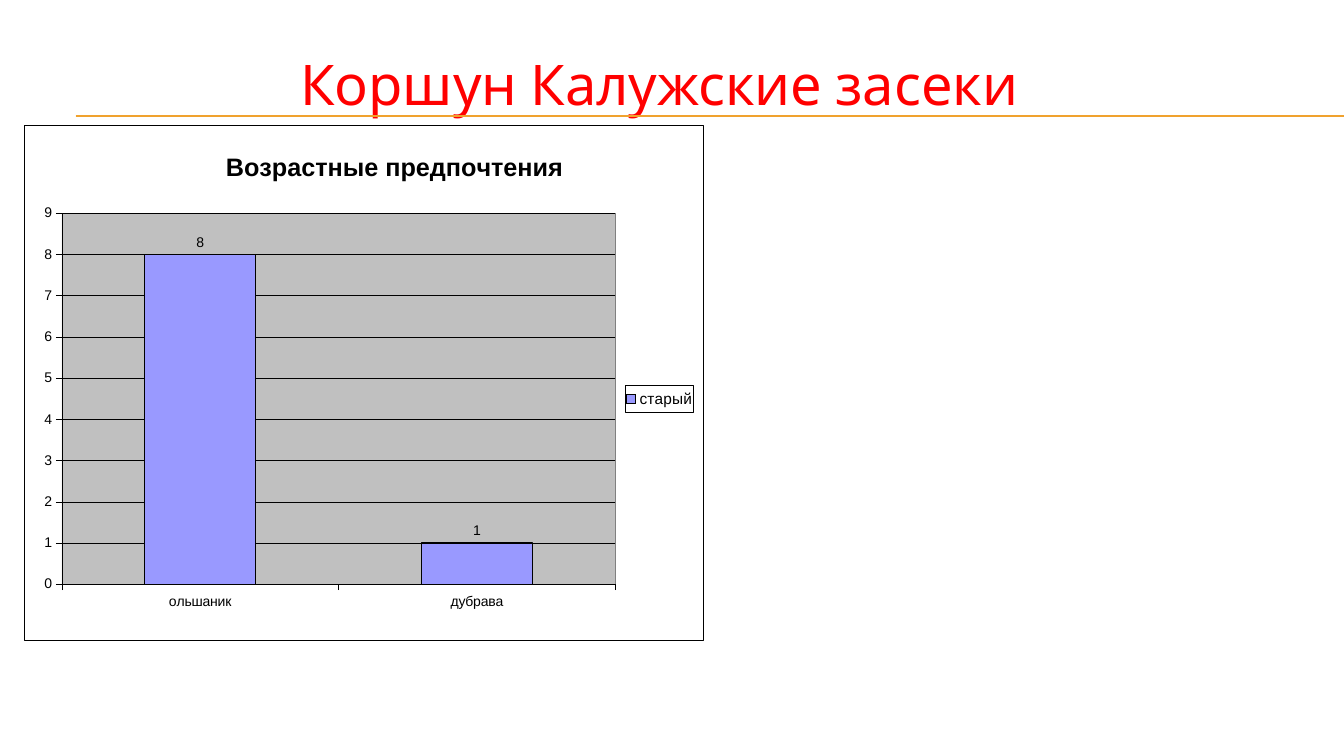
from dataclasses import dataclass
from typing import Optional

from lxml.etree import SubElement
from pptx import Presentation
from pptx.chart.chart import Chart
from pptx.chart.data import CategoryChartData
from pptx.dml.color import RGBColor
from pptx.enum.chart import XL_CHART_TYPE, XL_LABEL_POSITION, XL_LEGEND_POSITION, XL_TICK_MARK
from pptx.enum.shapes import MSO_CONNECTOR
from pptx.enum.text import MSO_ANCHOR, PP_ALIGN
from pptx.oxml import parse_xml
from pptx.oxml.ns import nsdecls, qn
from pptx.util import Inches, Pt

RED = RGBColor(0xFF, 0x00, 0x00)
GOLD = RGBColor(0xF0, 0xA2, 0x2E)
BLACK = RGBColor(0x00, 0x00, 0x00)
WHITE = RGBColor(0xFF, 0xFF, 0xFF)
SILVER = RGBColor(0xC0, 0xC0, 0xC0)
GREY = RGBColor(0x80, 0x80, 0x80)
LAVENDER = RGBColor(0x99, 0x99, 0xFF)
HAIRLINE = Pt(0.25)


@dataclass
class Rule:
    left: float
    right: float
    top: float


@dataclass
class Layout:
    """Fractions of the chart area."""
    x: float
    y: float
    w: Optional[float] = None
    h: Optional[float] = None
    inner: bool = False


RULES = [Rule(0.75, 13.33, 1.15), Rule(0.75, 13.33, 1.16)]


def add_rule(slide, rule: Rule) -> None:
    line = slide.shapes.add_connector(
        MSO_CONNECTOR.STRAIGHT,
        Inches(rule.left), Inches(rule.top), Inches(rule.right), Inches(rule.top))
    line.line.color.rgb = GOLD
    line.line.width = Pt(0.75)
    SubElement(line._element.spPr, qn("a:effectLst"))


def style_font(font, size: float, bold: bool = False) -> None:
    font.name = "Arial"
    font.size = Pt(size)
    font.bold = bold
    font.color.rgb = BLACK


def style_line(line, color: RGBColor = BLACK, width: int = HAIRLINE) -> None:
    line.color.rgb = color
    line.width = width


def area_format(fill: RGBColor, border: RGBColor):
    return parse_xml(
        f'<c:spPr {nsdecls("c", "a")}>'
        f'<a:solidFill><a:srgbClr val="{fill}"/></a:solidFill>'
        f'<a:ln w="{HAIRLINE}"><a:solidFill><a:srgbClr val="{border}"/></a:solidFill></a:ln>'
        '</c:spPr>')


def place(element, index: int, layout: Layout) -> None:
    """Give a chart part a manual layout at the child index its schema asks for."""
    for old in element.findall(qn("c:layout")):
        element.remove(old)
    node = parse_xml(f'<c:layout {nsdecls("c")}><c:manualLayout/></c:layout>')
    settings = [("layoutTarget", "inner" if layout.inner else None),
                ("xMode", "edge"), ("yMode", "edge"),
                ("x", layout.x), ("y", layout.y), ("w", layout.w), ("h", layout.h)]
    for tag, value in settings:
        if value is not None:
            SubElement(node[0], qn(f"c:{tag}")).set("val", str(value))
    element.insert(index, node)


def style_axes(chart: Chart) -> None:
    for axis in (chart.category_axis, chart.value_axis):
        axis.major_tick_mark = XL_TICK_MARK.OUTSIDE
        axis.minor_tick_mark = XL_TICK_MARK.NONE
        style_font(axis.tick_labels.font, 10)
        style_line(axis.format.line)
    values = chart.value_axis
    values.minimum_scale, values.maximum_scale, values.major_unit = 0, 9, 1
    values.has_major_gridlines = True
    style_line(values.major_gridlines.format.line)


def style_bars(chart: Chart) -> None:
    plot = chart.plots[0]
    plot.gap_width = 150
    plot.vary_by_categories = False
    bars = plot.series[0]
    bars.format.fill.solid()
    bars.format.fill.fore_color.rgb = LAVENDER
    style_line(bars.format.line, width=Pt(1))
    labels = bars.data_labels
    labels.show_value = True
    labels.position = XL_LABEL_POSITION.OUTSIDE_END
    style_font(labels.font, 10)


def add_age_chart(slide) -> None:
    data = CategoryChartData()
    data.categories = ["ольшаник", "дубрава"]
    data.add_series("старый", [8, 1])
    chart = slide.shapes.add_chart(
        XL_CHART_TYPE.COLUMN_CLUSTERED,
        Inches(0.24), Inches(1.24), Inches(6.74), Inches(5.11), data).chart
    style_font(chart.font, 10)
    style_axes(chart)
    style_bars(chart)

    # Chart title
    heading = chart.chart_title
    heading.text_frame.text = "Возрастные предпочтения"
    style_font(heading.text_frame.paragraphs[0].runs[0].font, 18, bold=True)
    heading.include_in_layout = False
    place(heading._element, 1, Layout(0.29, 0.04))

    # Legend
    chart.has_legend = True
    legend = chart.legend
    legend.position = XL_LEGEND_POSITION.RIGHT
    legend.include_in_layout = False
    style_font(legend.font, 11)
    place(legend._element, 1, Layout(0.885, 0.505, 0.1, 0.053))
    legend._element.find(qn("c:txPr")).addprevious(area_format(WHITE, BLACK))

    # Plot and chart areas
    space = chart._chartSpace
    plot_area = space.chart.plotArea
    place(plot_area, 0, Layout(0.055, 0.171, 0.815, 0.721, inner=True))
    plot_area.append(area_format(SILVER, GREY))
    space.chart.addnext(area_format(WHITE, BLACK))


def set_title(slide) -> None:
    title = slide.shapes.title
    title.left, title.top = Inches(1.85), Inches(0.44)
    title.width, title.height = Inches(9.38), Inches(0.77)
    frame = title.text_frame
    frame.text = "Коршун Калужские засеки"
    frame.word_wrap = True
    frame.vertical_anchor = MSO_ANCHOR.MIDDLE
    paragraph = frame.paragraphs[0]
    paragraph.alignment = PP_ALIGN.CENTER
    font = paragraph.runs[0].font
    font.name = "Karla"
    font.size = Pt(40)
    font.color.rgb = RED


def main() -> None:
    deck = Presentation()
    deck.slide_width, deck.slide_height = Inches(13.33), Inches(7.5)
    slide = deck.slides.add_slide(deck.slide_layouts[5])
    for rule in RULES:
        add_rule(slide, rule)
    add_age_chart(slide)
    set_title(slide)
    deck.save("out.pptx")


if __name__ == "__main__":
    main()
